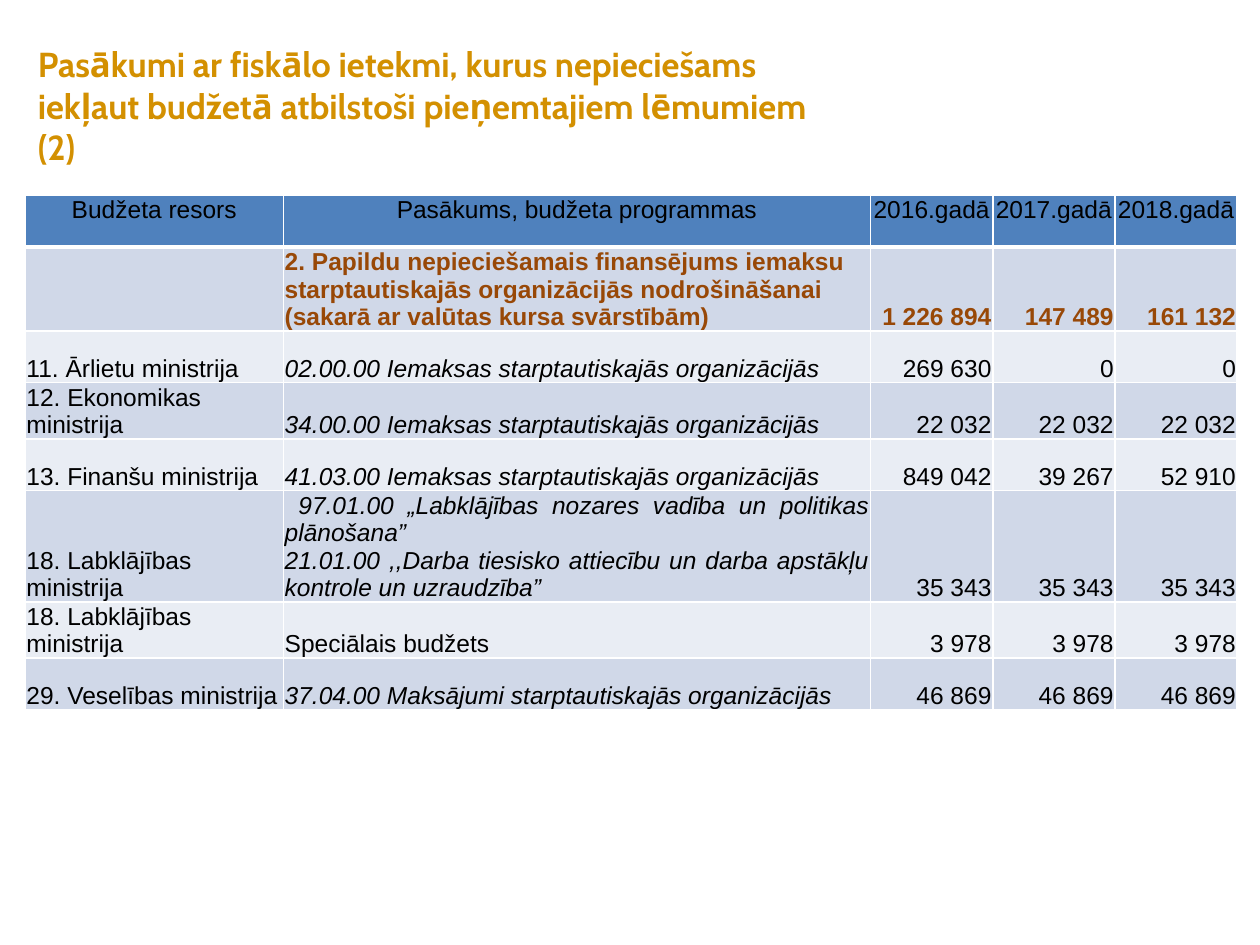
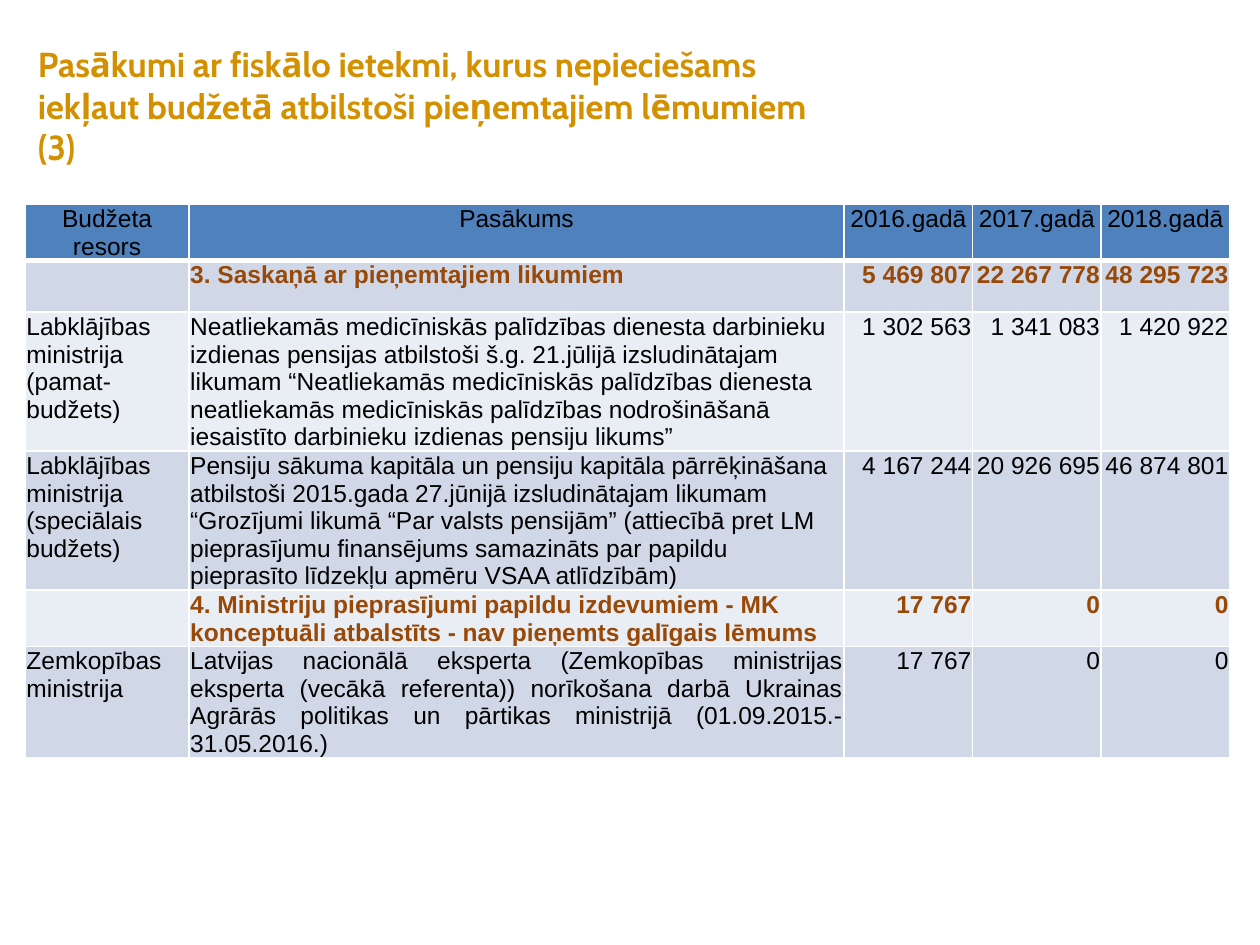
from dataclasses import dataclass

from lxml.etree import SubElement
from pptx import Presentation
from pptx.dml.color import RGBColor
from pptx.enum.text import MSO_ANCHOR, MSO_AUTO_SIZE, PP_ALIGN
from pptx.oxml.ns import qn
from pptx.util import Inches, Pt


@dataclass(frozen=True)
class Theme:
    title_font: str = "Cabin"
    title_size: float = 19.8
    title_color: str = "D39001"
    table_font: str = "Arial"
    table_size: int = 14
    text: str = "000000"
    accent: str = "984807"
    header_fill: str = "4F81BD"
    bands: tuple = ("D0D8E8", "E9EDF4")
    border: str = "FFFFFF"
    border_width: int = 1
    header_rule: int = 3


@dataclass(frozen=True)
class Row:
    """One budget line; section rows are bold and carry the accent colour."""
    office: str
    measures: tuple
    amounts: tuple
    section: bool = False
    italic: bool = False
    align: PP_ALIGN = PP_ALIGN.LEFT


THEME = Theme()
TITLE = ("Pasākumi ar fiskālo ietekmi, kurus nepieciešams iekļaut budžetā "
         "atbilstoši pieņemtajiem lēmumiem ({})")
TITLE_BOX = (0.2, 0.6, 6.61, 0.47)
YEARS = tuple(f"{year}.gadā" for year in (2016, 2017, 2018))
ROW_HEIGHT = 0.41
JUSTIFY = PP_ALIGN.JUSTIFY

MEMBERSHIP_ROWS = [
    Row("", ("2. Papildu nepieciešamais finansējums iemaksu starptautiskajās "
             "organizācijās nodrošināšanai (sakarā ar valūtas kursa svārstībām)",),
        (1226894, 147489, 161132), section=True),
    Row("11. Ārlietu ministrija",
        ("02.00.00 Iemaksas starptautiskajās organizācijās",),
        (269630, 0, 0), italic=True, align=JUSTIFY),
    Row("12. Ekonomikas ministrija",
        ("34.00.00 Iemaksas starptautiskajās organizācijās",),
        (22032,) * 3, italic=True, align=JUSTIFY),
    Row("13. Finanšu ministrija",
        ("41.03.00 Iemaksas starptautiskajās organizācijās",),
        (849042, 39267, 52910), italic=True),
    Row("18. Labklājības ministrija",
        (" 97.01.00 „Labklājības nozares vadība un politikas plānošana”",
         "21.01.00 ,,Darba tiesisko attiecību un darba apstākļu kontrole "
         "un uzraudzība”"),
        (35343,) * 3, italic=True, align=JUSTIFY),
    Row("18. Labklājības ministrija", ("Speciālais budžets",),
        (3978,) * 3, align=JUSTIFY),
    Row("29. Veselības ministrija",
        ("37.04.00 Maksājumi starptautiskajās organizācijās",),
        (46869,) * 3, italic=True, align=JUSTIFY),
]

LAW_ROWS = [
    Row("", ("3. Saskaņā ar pieņemtajiem likumiem",),
        (5469807, 22267778, 48295723), section=True),
    Row("Labklājības ministrija (pamat-budžets)",
        ("Neatliekamās medicīniskās palīdzības dienesta darbinieku izdienas "
         "pensijas atbilstoši š.g. 21.jūlijā izsludinātajam likumam "
         "“Neatliekamās medicīniskās palīdzības dienesta neatliekamās "
         "medicīniskās palīdzības nodrošināšanā iesaistīto darbinieku "
         "izdienas pensiju likums”",),
        (1302563, 1341083, 1420922)),
    Row("Labklājības ministrija (speciālais budžets)",
        ("Pensiju sākuma kapitāla un pensiju kapitāla pārrēķināšana atbilstoši "
         "2015.gada 27.jūnijā izsludinātajam likumam “Grozījumi likumā “Par "
         "valsts pensijām” (attiecībā pret LM pieprasījumu finansējums "
         "samazināts par papildu pieprasīto līdzekļu apmēru VSAA atlīdzībām)",),
        (4167244, 20926695, 46874801)),
    Row("", ("4. Ministriju pieprasījumi papildu izdevumiem - MK konceptuāli "
             "atbalstīts - nav pieņemts galīgais lēmums",),
        (17767, 0, 0), section=True),
    Row("Zemkopības ministrija",
        ("Latvijas nacionālā eksperta (Zemkopības ministrijas eksperta (vecākā "
         "referenta)) norīkošana darbā Ukrainas Agrārās politikas un pārtikas "
         "ministrijā (01.09.2015.-31.05.2016.)",),
        (17767, 0, 0), align=JUSTIFY),
]


def style_font(font, name, size, color, bold=False, italic=False):
    font.name, font.size = name, Pt(size)
    font.bold, font.italic = bold, italic
    font.color.rgb = RGBColor.from_string(color)


def add_title(s, box, text):
    title = s.shapes.title
    title.left, title.top, title.width, title.height = map(Inches, box)
    tf = title.text_frame
    tf.word_wrap = True
    tf.auto_size = MSO_AUTO_SIZE.NONE
    tf.vertical_anchor = MSO_ANCHOR.MIDDLE
    p = tf.paragraphs[0]
    p.alignment = PP_ALIGN.LEFT
    r = p.add_run()
    r.text = text
    style_font(r.font, THEME.title_font, THEME.title_size, THEME.title_color,
               bold=True)


def set_borders(cell, top, bottom):
    tc_pr = cell._tc.get_or_add_tcPr()
    widths = {"L": THEME.border_width, "R": THEME.border_width,
              "T": top, "B": bottom}
    for side, width in widths.items():
        ln = SubElement(tc_pr, qn(f"a:ln{side}"), w=str(Pt(width)))
        fill = SubElement(ln, qn("a:solidFill"))
        SubElement(fill, qn("a:srgbClr"), val=THEME.border)


def format_cell(cell, fill, anchor, top=THEME.border_width,
                bottom=THEME.border_width):
    set_borders(cell, top, bottom)
    cell.fill.solid()
    cell.fill.fore_color.rgb = RGBColor.from_string(fill)
    cell.margin_left = cell.margin_top = cell.margin_right = Inches(0.01)
    cell.margin_bottom = 0
    cell.vertical_anchor = anchor


def write_cell(cell, lines, align, color=THEME.text, bold=False, italic=False):
    tf = cell.text_frame
    for i, line in enumerate(lines):
        p = tf.add_paragraph() if i else tf.paragraphs[0]
        p.alignment = align
        style_font(p.font, THEME.table_font, THEME.table_size, color)
        if line:
            r = p.add_run()
            r.text = line
            style_font(r.font, THEME.table_font, THEME.table_size, color,
                       bold, italic)


def add_budget_table(s, left, top, widths, measure_header, rows, anchor):
    count = len(rows) + 1
    table = s.shapes.add_table(
        count, len(widths), Inches(left), Inches(top),
        Inches(sum(widths)), Inches(ROW_HEIGHT * count)).table
    for column, width in zip(table.columns, widths):
        column.width = Inches(width)
    for table_row in table.rows:
        table_row.height = Inches(ROW_HEIGHT)

    headers = ("Budžeta resors", measure_header, *YEARS)
    for cell, header in zip(table.rows[0].cells, headers):
        format_cell(cell, THEME.header_fill, MSO_ANCHOR.TOP,
                    bottom=THEME.header_rule)
        write_cell(cell, [header], PP_ALIGN.CENTER)

    for i, row in enumerate(rows):
        cells = list(table.rows[i + 1].cells)
        rule = THEME.border_width if i else THEME.header_rule
        for cell in cells:
            format_cell(cell, THEME.bands[i % 2], anchor, top=rule)
        color = THEME.accent if row.section else THEME.text
        write_cell(cells[0], [row.office], PP_ALIGN.LEFT)
        write_cell(cells[1], row.measures, row.align, color, row.section,
                   row.italic)
        for cell, amount in zip(cells[2:], row.amounts):
            write_cell(cell, [f"{amount:,}".replace(",", " ")],
                       PP_ALIGN.RIGHT, color, row.section)


def add_budget_slide(prs, number, **table):
    s = prs.slides.add_slide(prs.slide_layouts[5])
    add_title(s, TITLE_BOX, TITLE.format(number))
    add_budget_table(s, left=TITLE_BOX[0], **table)


def main():
    prs = Presentation()
    prs.slide_width, prs.slide_height = Inches(10), Inches(7.5)
    add_budget_slide(prs, 2, top=1.55, widths=[2.05, 4.66] + [0.97] * 3,
                     measure_header="Pasākums, budžeta programmas",
                     rows=MEMBERSHIP_ROWS, anchor=MSO_ANCHOR.BOTTOM)
    add_budget_slide(prs, 3, top=1.62, widths=[1.3, 5.2] + [1.02] * 3,
                     measure_header="Pasākums",
                     rows=LAW_ROWS, anchor=MSO_ANCHOR.TOP)
    prs.save("out.pptx")


if __name__ == "__main__":
    main()
